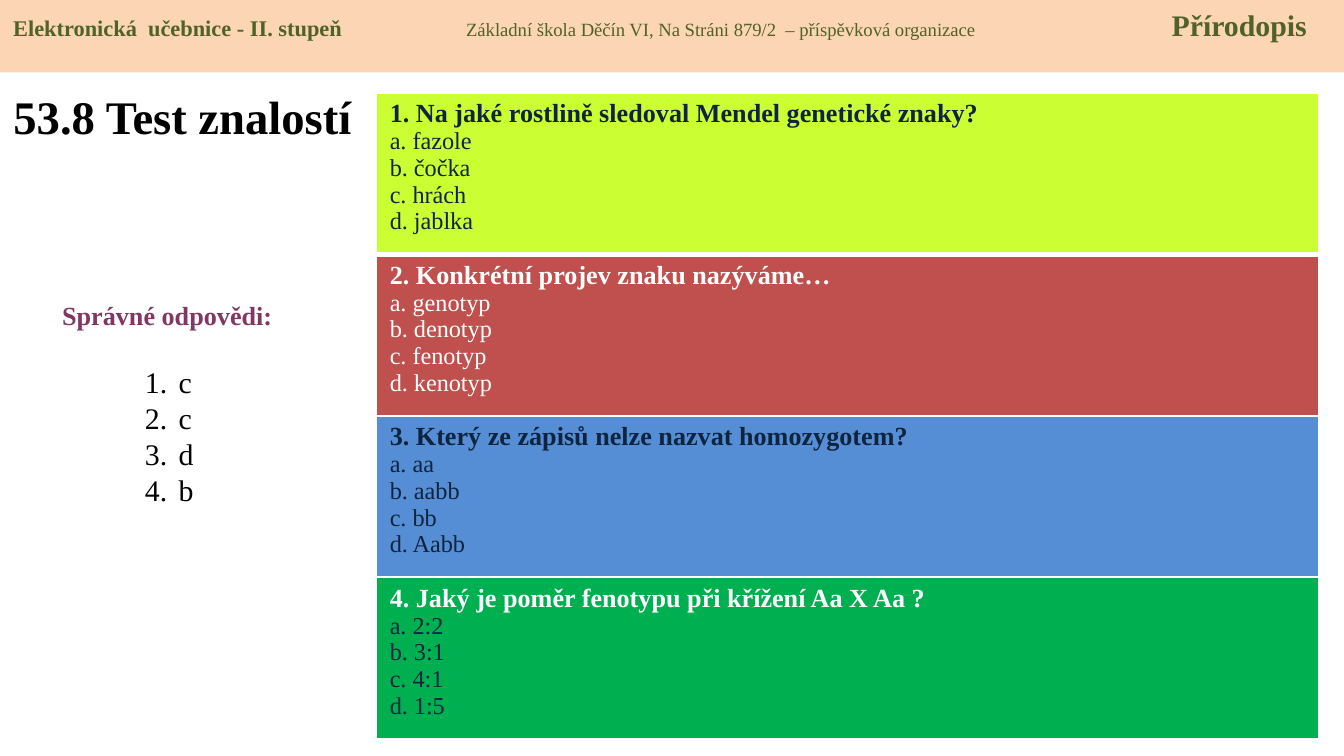
from lxml import etree
from pptx import Presentation
from pptx.dml.color import RGBColor
from pptx.enum.shapes import MSO_SHAPE as Shape
from pptx.enum.text import MSO_ANCHOR as Anchor, PP_ALIGN as Align
from pptx.oxml.ns import qn
from pptx.util import Inches, Pt

FONT = "Times New Roman"
NAVY, WHITE, OLIVE = "0F243E", "FFFFFF", "4F6228"

QUESTIONS = [
    ("1. Na jaké rostlině sledoval Mendel genetické znaky?",
     ["a. fazole", "b. čočka", "c. hrách", "d. jablka"], "CCFF33", NAVY, NAVY),
    ("2. Konkrétní projev znaku nazýváme…",
     ["a. genotyp", "b. denotyp", "c. fenotyp", "d. kenotyp"], "C0504D", WHITE, WHITE),
    ("3. Který ze zápisů nelze nazvat homozygotem?",
     ["a. aa", "b. aabb", "c. bb", "d. Aabb"], "558ED5", NAVY, NAVY),
    ("4. Jaký je poměr fenotypu při křížení Aa X Aa ?",
     ["a. 2:2", "b. 3:1", "c. 4:1", "d. 1:5"], "00B050", WHITE, NAVY),
]


def rgb(value):
    return RGBColor.from_string(value)


def place(shape, box):
    shape.left, shape.top, shape.width, shape.height = map(Inches, box)


def add_run(paragraph, text, size, color, bold=False):
    run = paragraph.add_run()
    run.text = text
    font = run.font
    font.name, font.size, font.bold = FONT, Pt(size), bold
    font.color.rgb = rgb(color)


def add_paragraph(frame, index):
    return frame.add_paragraph() if index else frame.paragraphs[0]


def add_header(slide, box):
    band = slide.shapes.add_shape(Shape.RECTANGLE, *map(Inches, box))
    band.shadow.inherit = False
    band.fill.solid()
    band.fill.fore_color.rgb = rgb("FCD5B5")
    band.line.fill.background()
    frame = band.text_frame
    frame.word_wrap = True
    frame.vertical_anchor = Anchor.TOP
    line = frame.paragraphs[0]
    line.alignment = Align.LEFT
    tabs = etree.SubElement(line._p.get_or_add_pPr(), qn("a:tabLst"))
    for stop in (3.37, 8.62):
        etree.SubElement(tabs, qn("a:tab"), pos=str(Inches(stop)), algn="l")
    add_run(line, "Elektronická  učebnice - II. stupeň\t", 12, OLIVE, True)
    add_run(line, "Základní škola Děčín VI, Na Stráni 879/2  – příspěvková organizace\t", 10, OLIVE)
    add_run(line, "Přírodopis", 16, OLIVE, True)


def add_title(slide, box):
    title = slide.shapes.title
    place(title, box)
    frame = title.text_frame
    frame.vertical_anchor = Anchor.MIDDLE
    heading = frame.paragraphs[0]
    heading.alignment = Align.LEFT
    add_run(heading, "53.8 Test znalostí", 25, "000000", True)


def add_answers(slide, box):
    left, top, width, height = box
    label = slide.shapes.add_textbox(*map(Inches, (left, top, width, 0.34))).text_frame
    label.word_wrap = True
    label.paragraphs[0].alignment = Align.CENTER
    add_run(label.paragraphs[0], "Správné odpovědi:", 14, "813763", True)

    list_box = (left + 0.63, top + 0.48, 0.48, height - 0.48)
    answers = slide.shapes.add_textbox(*map(Inches, list_box)).text_frame
    answers.word_wrap = True
    for index, letter in enumerate("ccdb"):
        answer = add_paragraph(answers, index)
        props = answer._p.get_or_add_pPr()
        props.set("marL", str(Inches(0.25)))
        props.set("indent", str(Inches(-0.25)))
        etree.SubElement(props, qn("a:buFont"), typeface="+mj-lt")
        etree.SubElement(props, qn("a:buAutoNum"), type="arabicPeriod")
        add_run(answer, letter, 16, "000000")


def set_borders(cell, widths):
    props = cell._tc.get_or_add_tcPr()
    for index, (side, width) in enumerate(widths.items()):
        border = etree.Element(qn(f"a:ln{side}"), w=str(Pt(width)))
        fill = etree.SubElement(border, qn("a:solidFill"))
        etree.SubElement(fill, qn("a:srgbClr"), val=WHITE)
        props.insert(index, border)


def add_questions(slide, box):
    count = len(QUESTIONS)
    table = slide.shapes.add_table(count, 1, *map(Inches, box)).table
    for index, (question, options, fill, question_color, option_color) in enumerate(QUESTIONS):
        table.rows[index].height = Inches(box[3] / count)
        cell = table.cell(index, 0)
        cell.fill.solid()
        cell.fill.fore_color.rgb = rgb(fill)
        set_borders(cell, {"L": 1, "R": 1, "T": 3 if index == 1 else 1, "B": 3 if index == 0 else 1})
        frame = cell.text_frame
        add_run(frame.paragraphs[0], question, 14, question_color, True)
        for option in options:
            add_run(frame.add_paragraph(), option, 13, option_color)


def main():
    deck = Presentation()
    deck.slide_width, deck.slide_height = Inches(10), Inches(10 * 9 / 16)
    slide = deck.slides.add_slide(deck.slide_layouts[5])
    add_title(slide, (0, 0.54, 2.87, 0.65))
    add_header(slide, (0, 0, 10, 0.54))
    add_answers(slide, (0.35, 2.18, 1.79, 1.66))
    add_questions(slide, (2.8, 0.69, 7.01, 4.8))
    deck.save("out.pptx")


if __name__ == "__main__":
    main()
